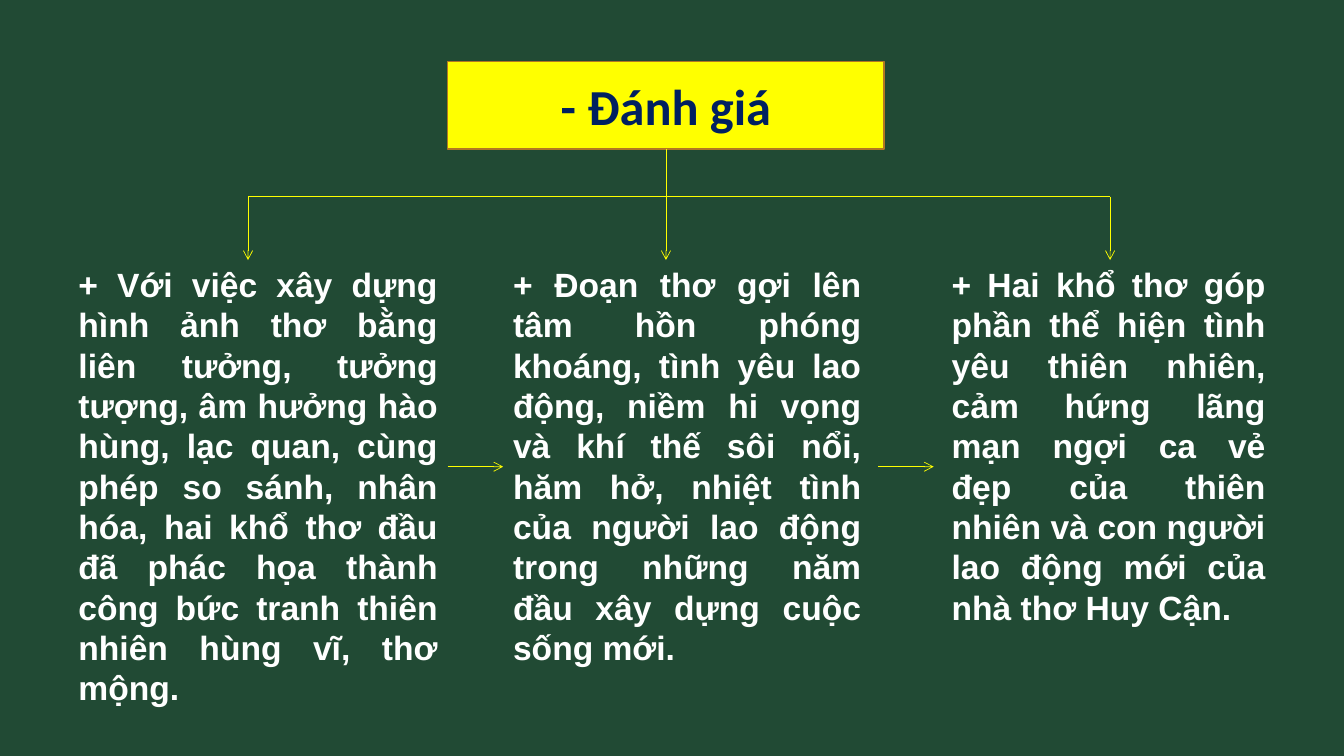
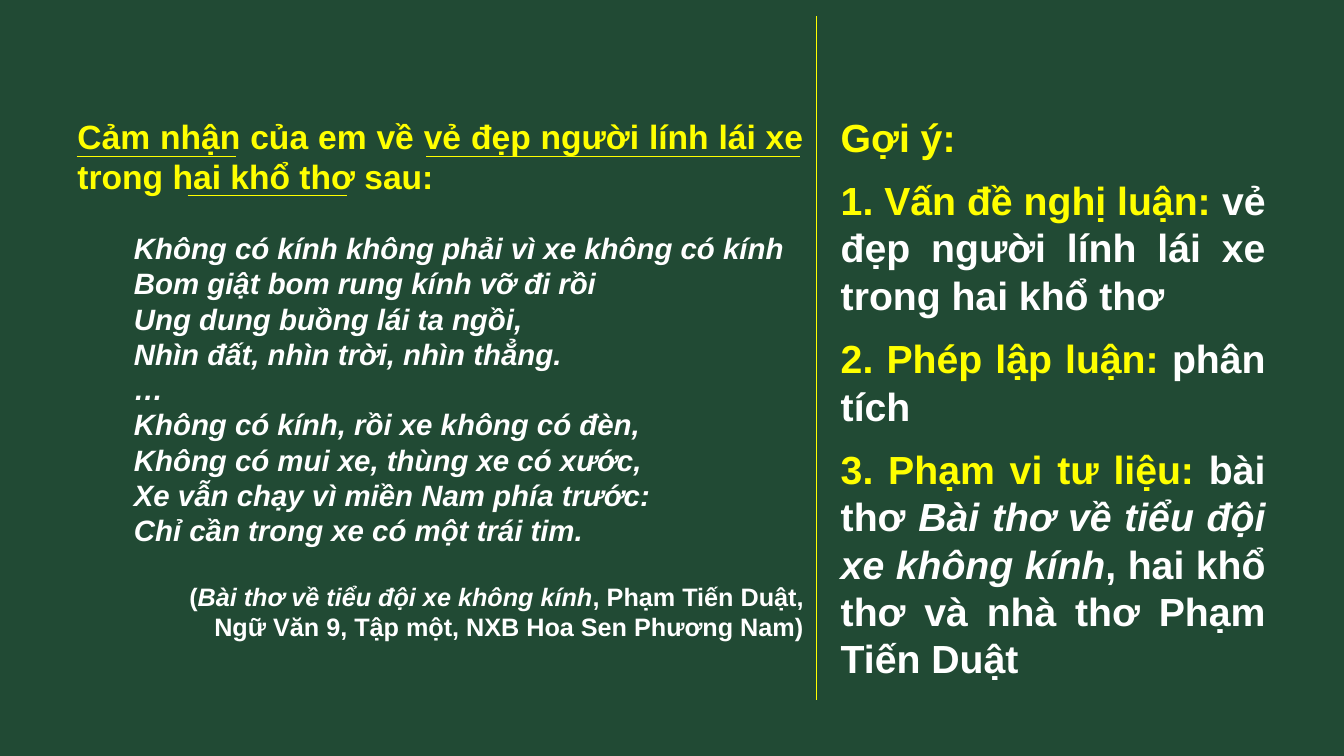
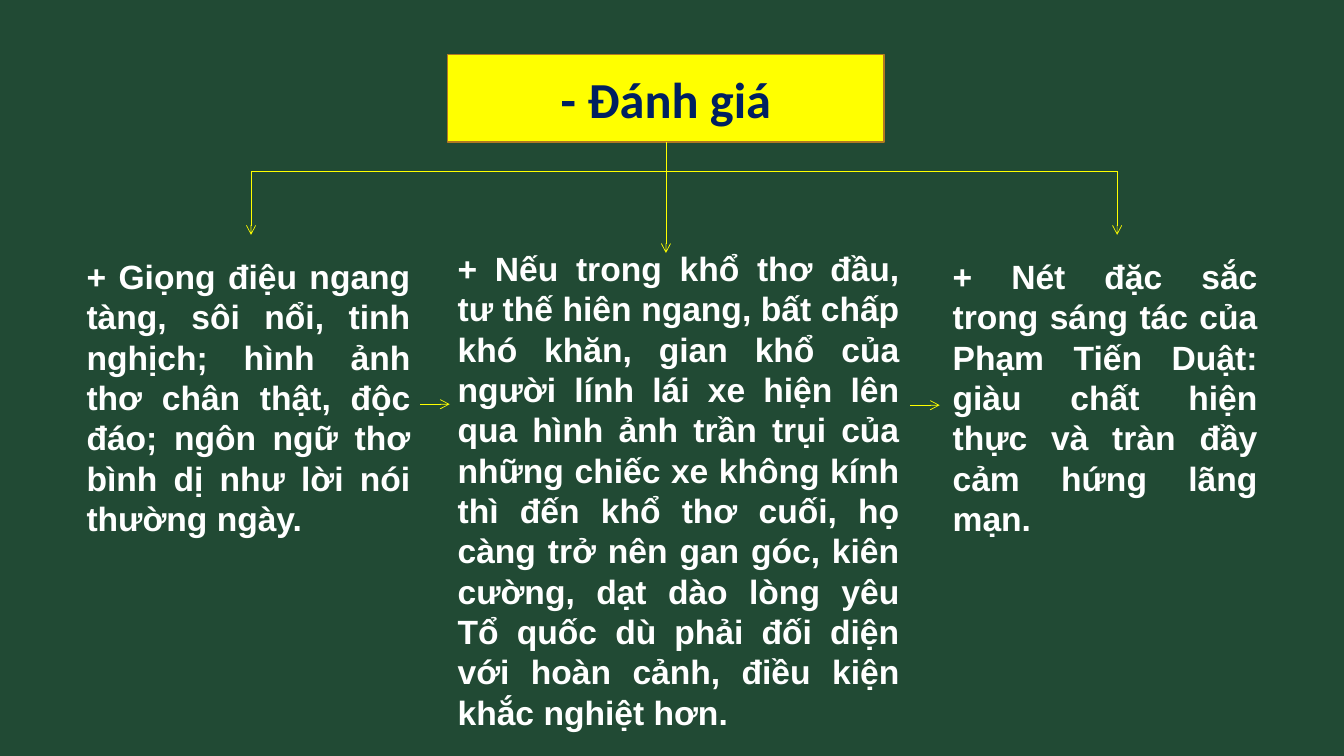
import lxml.etree
import pptx
import pptx.dml.color
import pptx.enum.shapes
import pptx.enum.text
import pptx.oxml.ns
import pptx.util

Inches = pptx.util.Inches
Pt = pptx.util.Pt
ALIGN = pptx.enum.text.PP_ALIGN

COLORS = {
    "board": "214A34",
    "chalk": "FFFFFF",
    "yellow": "FFFF00",
    "navy": "002060",
    "border": "B27822",
}


def color(name):
    return pptx.dml.color.RGBColor.from_string(COLORS[name])


class Lesson:
    """Holds the deck, the shared style and the slide being filled."""

    def __init__(self):
        self.deck = pptx.Presentation()
        self.deck.slide_width = Inches(13.33)
        self.deck.slide_height = Inches(7.5)
        background = self.deck.slide_master.background.fill
        background.solid()
        background.fore_color.rgb = color("board")
        self.slide = None

    def new_slide(self):
        self.slide = self.deck.slides.add_slide(self.deck.slide_layouts[6])

    def paragraph(self, frame, spans, size=24, tint="chalk", align=ALIGN.JUSTIFY,
                  font="Arial", before=0, after=0, indent=0):
        """Fill the next paragraph; each span is (text, colour or None, italic)."""
        para = frame.paragraphs[0]
        if para.runs:
            para = frame.add_paragraph()
        para.alignment = align
        para.space_before = Pt(before)
        para.space_after = Pt(after)
        if indent:
            para._p.get_or_add_pPr().set("marL", str(Inches(indent)))
        for text, span_tint, italic in spans:
            span = para.add_run()
            span.text = text
            span.font.name = font
            span.font.size = Pt(size)
            span.font.bold = True
            span.font.italic = italic
            span.font.color.rgb = color(span_tint or tint)

    def text_box(self, left, top, width, height):
        box = self.slide.shapes.add_textbox(
            Inches(left), Inches(top), Inches(width), Inches(height))
        frame = box.text_frame
        frame.word_wrap = True
        frame.auto_size = pptx.enum.text.MSO_AUTO_SIZE.SHAPE_TO_FIT_TEXT
        return frame

    def line(self, start, end, weight=0.5, arrow=False):
        connector = self.slide.shapes.add_connector(
            pptx.enum.shapes.MSO_CONNECTOR.STRAIGHT,
            *(Inches(length) for length in (*start, *end)))
        connector.line.color.rgb = color("yellow")
        connector.line.width = Pt(weight)
        qn = pptx.oxml.ns.qn
        properties = connector.element.spPr
        if arrow:
            outline = properties.find(qn("a:ln"))
            lxml.etree.SubElement(outline, qn("a:tailEnd"), type="arrow")
        lxml.etree.SubElement(properties, qn("a:effectLst"))
        return connector

    def title_box(self, text, left, top, width, height):
        box = self.slide.shapes.add_shape(
            pptx.enum.shapes.MSO_SHAPE.RECTANGLE,
            Inches(left), Inches(top), Inches(width), Inches(height))
        box.shadow.inherit = False
        box.fill.solid()
        box.fill.fore_color.rgb = color("yellow")
        box.line.color.rgb = color("border")
        box.line.width = Pt(1)
        box.text_frame.vertical_anchor = pptx.enum.text.MSO_ANCHOR.MIDDLE
        self.paragraph(box.text_frame, [(text, None, False)], size=36, tint="navy",
                       align=ALIGN.CENTER, font="Calibri")
        return box

    def review(self, title_top, bar, middle_end, columns, steps):
        """Draw a title branching into three columns.

        bar is (left, right, y); columns are (box, text); steps are the
        (left, right, y) of the arrows from one column to the next.
        """
        self.new_slide()
        left, width, height, drop = 4.44, 4.33, 0.87, 0.63
        title = self.title_box("- Đánh giá", left, title_top, width, height)
        bar_left, bar_right, bar_y = bar
        middle = left + width / 2
        self.line((bar_left, bar_y), (bar_right, bar_y))
        for x in (bar_left, bar_right):
            self.line((x, bar_y), (x, bar_y + drop), arrow=True)
        stem = self.line((middle, title_top + height), (middle, middle_end), arrow=True)
        stem.begin_connect(title, 2)
        for place, text in columns:
            self.paragraph(self.text_box(*place), [(text, None, False)])
        for step_left, step_right, y in steps:
            self.line((step_left, y), (step_right, y), arrow=True)

    def exercise(self, question, underlines, verses, source, hints):
        """Draw a question with its poem on the left and hints on the right."""
        self.new_slide()
        self.line((8.1, 0.16), (8.1, 6.94), weight=1)
        frame = self.text_box(0.67, 1.1, 7.4, 5.4)
        self.paragraph(frame, [(question, "yellow", False)], after=24)
        for verse in verses:
            self.paragraph(frame, [(verse, None, True)], size=21, align=ALIGN.LEFT,
                           indent=0.56, after=24 if verse == verses[-1] else 0)
        for spans in source:
            self.paragraph(frame, spans, size=18, align=ALIGN.RIGHT)
        for left, right, y in underlines:
            self.line((left, y), (right, y))
        frame = self.text_box(8.24, 1.07, 4.41, 5.79)
        for spans in hints:
            self.paragraph(frame, spans, size=28, before=6, after=6)


def main():
    lesson = Lesson()
    lesson.review(
        title_top=0.61, bar=(2.46, 11.01, 1.95), middle_end=2.58,
        columns=[
            ((0.68, 2.57, 3.76, 4.54),
             "+ Với việc xây dựng hình ảnh thơ bằng liên tưởng, tưởng tượng, "
             "âm hưởng hào hùng, lạc quan, cùng phép so sánh, nhân hóa, hai khổ "
             "thơ đầu đã phác họa thành công bức tranh thiên nhiên hùng vĩ, thơ mộng."),
            ((4.99, 2.57, 3.65, 4.14),
             "+ Đoạn thơ gợi lên tâm hồn phóng khoáng, tình yêu lao động, niềm hi "
             "vọng và khí thế sôi nổi, hăm hở, nhiệt tình của người lao động trong "
             "những năm đầu xây dựng cuộc sống mới."),
            ((9.34, 2.57, 3.31, 3.74),
             "+ Hai khổ thơ góp phần thể hiện tình yêu thiên nhiên, cảm hứng lãng "
             "mạn ngợi ca vẻ đẹp của thiên nhiên và con người lao động mới của nhà "
             "thơ Huy Cận."),
        ],
        steps=[(4.44, 4.99, 4.63), (8.71, 9.26, 4.63)])

    poem = "Bài thơ về tiểu đội xe không kính"
    lesson.exercise(
        question="Cảm nhận của em về vẻ đẹp người lính lái xe trong hai khổ thơ sau:",
        underlines=[(0.76, 2.34, 1.55), (4.23, 7.93, 1.55), (1.86, 3.44, 1.94)],
        verses=[
            "Không có kính không phải vì xe không có kính",
            "Bom giật bom rung kính vỡ đi rồi",
            "Ung dung buồng lái ta ngồi,",
            "Nhìn đất, nhìn trời, nhìn thẳng.",
            "…",
            "Không có kính, rồi xe không có đèn,",
            "Không có mui xe, thùng xe có xước,",
            "Xe vẫn chạy vì miền Nam phía trước:",
            "Chỉ cần trong xe có một trái tim.",
        ],
        source=[
            [("(", None, False), (poem, None, True), (", Phạm Tiến Duật,", None, False)],
            [("Ngữ Văn 9, Tập một, NXB Hoa Sen Phương Nam)", None, False)],
        ],
        hints=[
            [("Gợi ý:", "yellow", False)],
            [("1. Vấn đề nghị luận: ", "yellow", False),
             ("vẻ đẹp người lính lái xe trong hai khổ thơ", None, False)],
            [("2. Phép lập luận: ", "yellow", False), ("phân tích", None, False)],
            [("3. Phạm vi tư liệu: ", "yellow", False), ("bài thơ ", None, False),
             (poem, None, True),
             (", hai khổ thơ và nhà thơ Phạm Tiến Duật", None, False)],
        ])

    lesson.review(
        title_top=0.54, bar=(2.49, 11.08, 1.7), middle_end=2.51,
        columns=[
            ((0.76, 2.49, 3.41, 2.93),
             "+ Giọng điệu ngang tàng, sôi nổi, tinh nghịch; hình ảnh thơ chân thật, "
             "độc đáo; ngôn ngữ thơ bình dị như lời nói thường ngày."),
            ((4.44, 2.41, 4.58, 4.95),
             "+ Nếu trong khổ thơ đầu, tư thế hiên ngang, bất chấp khó khăn, gian khổ "
             "của người lính lái xe hiện lên qua hình ảnh trần trụi của những chiếc xe "
             "không kính thì đến khổ thơ cuối, họ càng trở nên gan góc, kiên cường, "
             "dạt dào lòng yêu Tổ quốc dù phải đối diện với hoàn cảnh, điều kiện khắc "
             "nghiệt hơn."),
            ((9.35, 2.49, 3.22, 2.93),
             "+ Nét đặc sắc trong sáng tác của Phạm Tiến Duật: giàu chất hiện thực và "
             "tràn đầy cảm hứng lãng mạn."),
        ],
        steps=[(4.17, 4.46, 4.01), (9.03, 9.32, 4.02)])

    lesson.deck.save("out.pptx")


if __name__ == "__main__":
    main()
